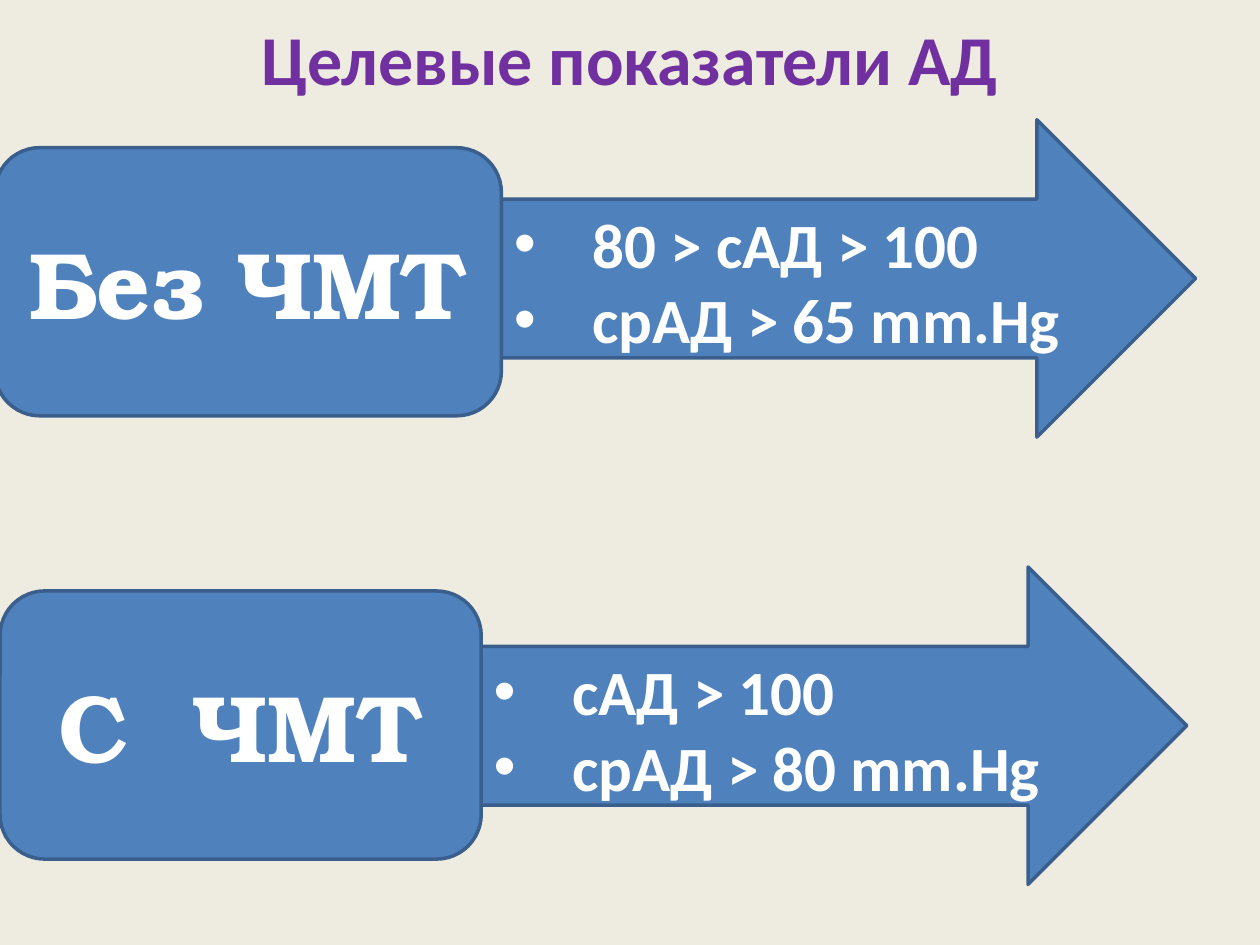
"""Builds a slide with target blood pressure values."""
from lxml import etree
from pptx import Presentation
from pptx.dml.color import RGBColor
from pptx.enum.shapes import MSO_SHAPE
from pptx.enum.text import MSO_ANCHOR, PP_ALIGN
from pptx.oxml.ns import qn
from pptx.util import Pt

ARROW = MSO_SHAPE.RIGHT_ARROW
ROUND = MSO_SHAPE.ROUNDED_RECTANGLE
TOP, MID = MSO_ANCHOR.TOP, MSO_ANCHOR.MIDDLE
LEFT, MIDDLE = PP_ALIGN.LEFT, PP_ALIGN.CENTER
HEX = {"back": "EEECE1", "title": "7030A0", "fill": "4F81BD",
       "line": "3A5F8C", "text": "FFFFFF"}
INDENT = Pt(45)
GROUPS = [
    ("Без ЧМТ", (-2.9, 84.4, 289.4, 153.2),
     ["80 > сАД > 100", "срАД > 65 mm.Hg"], (286.5, 68.4, 396.7, 181.4)),
    ("С  ЧМТ", (0, 337.7, 275, 153.2),
     ["сАД > 100", "срАД > 80 mm.Hg"], (275, 324, 403.2, 181.4)),
]


def paint(name):
    return RGBColor.from_string(HEX[name])


def bullet(para):
    props = para._p.get_or_add_pPr()
    props.set("marL", str(INDENT))
    props.set("indent", str(-INDENT))
    etree.SubElement(props, qn("a:buFont")).set("typeface", "Arial")
    etree.SubElement(props, qn("a:buChar")).set("char", "•")


def write(shape, lines, size=36, font="Calibri", tint="text",
          align=MIDDLE, anchor=MID, dots=False):
    frame = shape.text_frame
    frame.word_wrap = True
    frame.vertical_anchor = anchor
    frame.text = "\n".join(lines)
    for para in frame.paragraphs:
        para.alignment = align
        if dots:
            bullet(para)
        face = para.runs[0].font
        face.name, face.size, face.bold = font, Pt(size), True
        face.color.rgb = paint(tint)


def block(slide, kind, box):
    shape = slide.shapes.add_shape(kind, *map(Pt, box))
    shape.shadow.inherit = False
    shape.fill.solid()
    shape.fill.fore_color.rgb = paint("fill")
    shape.line.color.rgb = paint("line")
    shape.line.width = Pt(2)
    return shape


def main():
    deck = Presentation()
    deck.slide_width, deck.slide_height = Pt(720), Pt(540)
    slide = deck.slides.add_slide(deck.slide_layouts[6])
    slide.background.fill.solid()
    slide.background.fill.fore_color.rgb = paint("back")

    title = slide.shapes.add_textbox(0, 0, Pt(720), Pt(66.2))
    write(title, ["Целевые показатели АД"], size=40, tint="title")
    for _, _, goals, box in GROUPS:
        write(block(slide, ARROW, box), goals,
              align=LEFT, anchor=TOP, dots=True)
    for label, box, _, _ in GROUPS:
        write(block(slide, ROUND, box), [label],
              size=54, font="TeX Gyre Bonum")
    deck.save("out.pptx")


if __name__ == "__main__":
    main()
